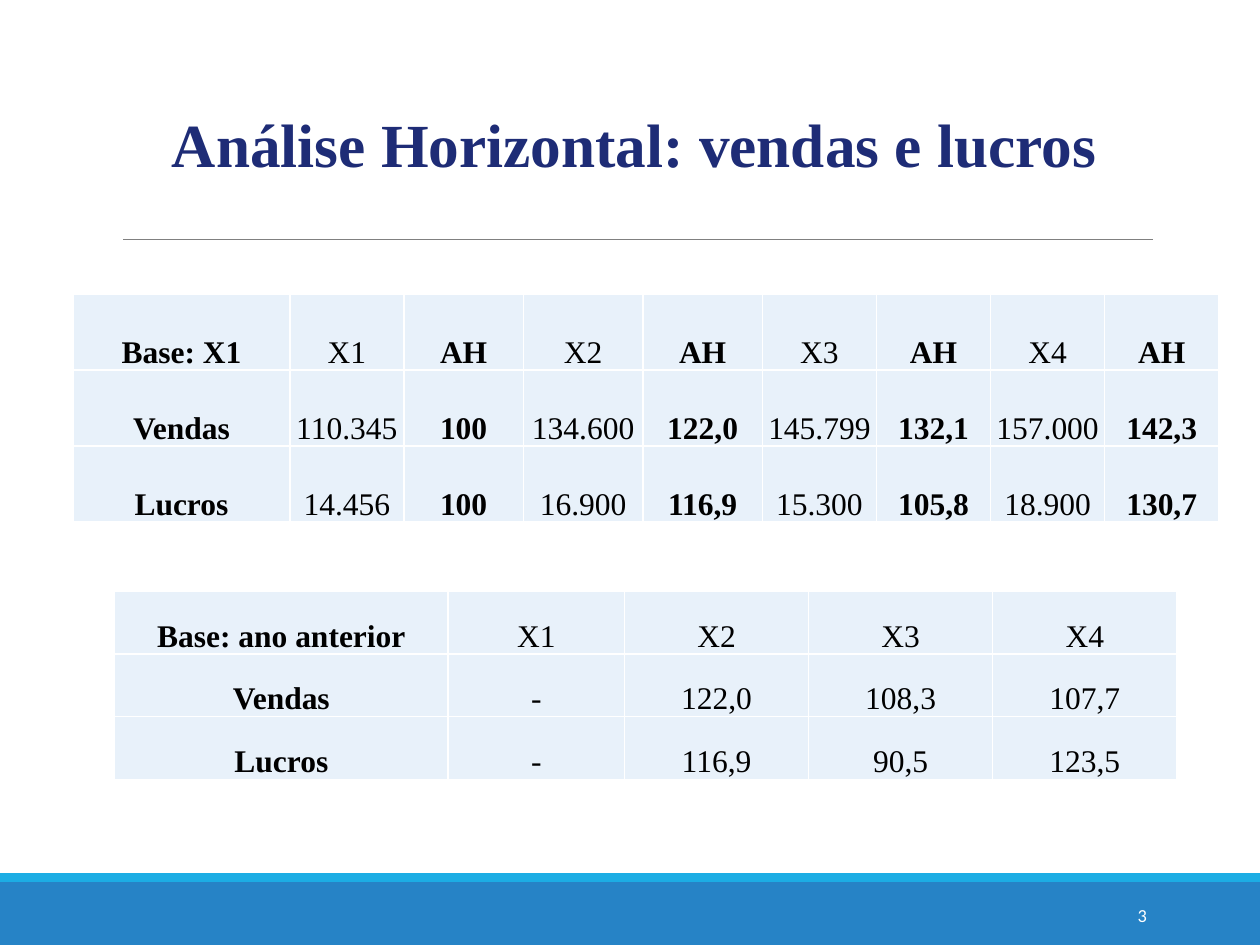
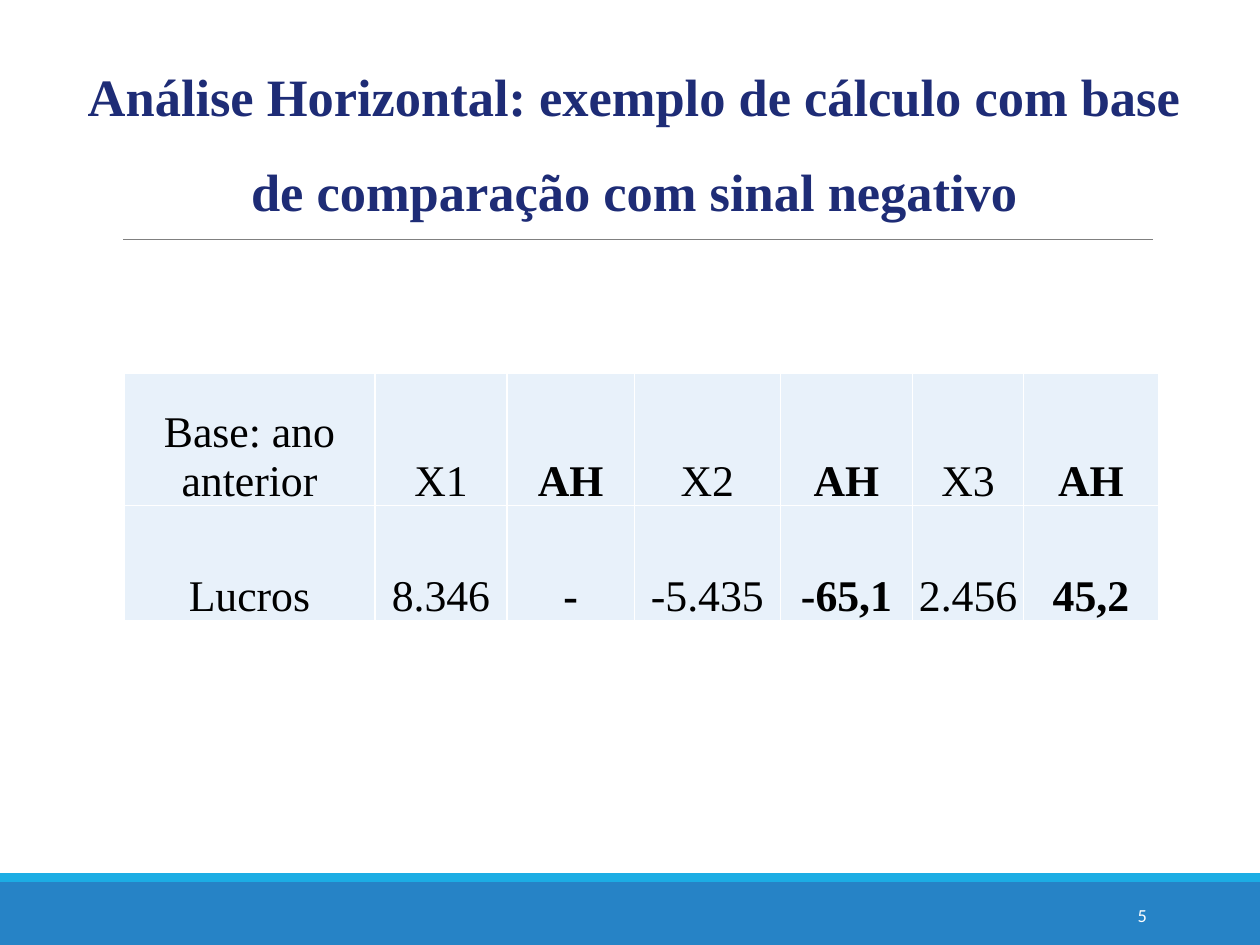
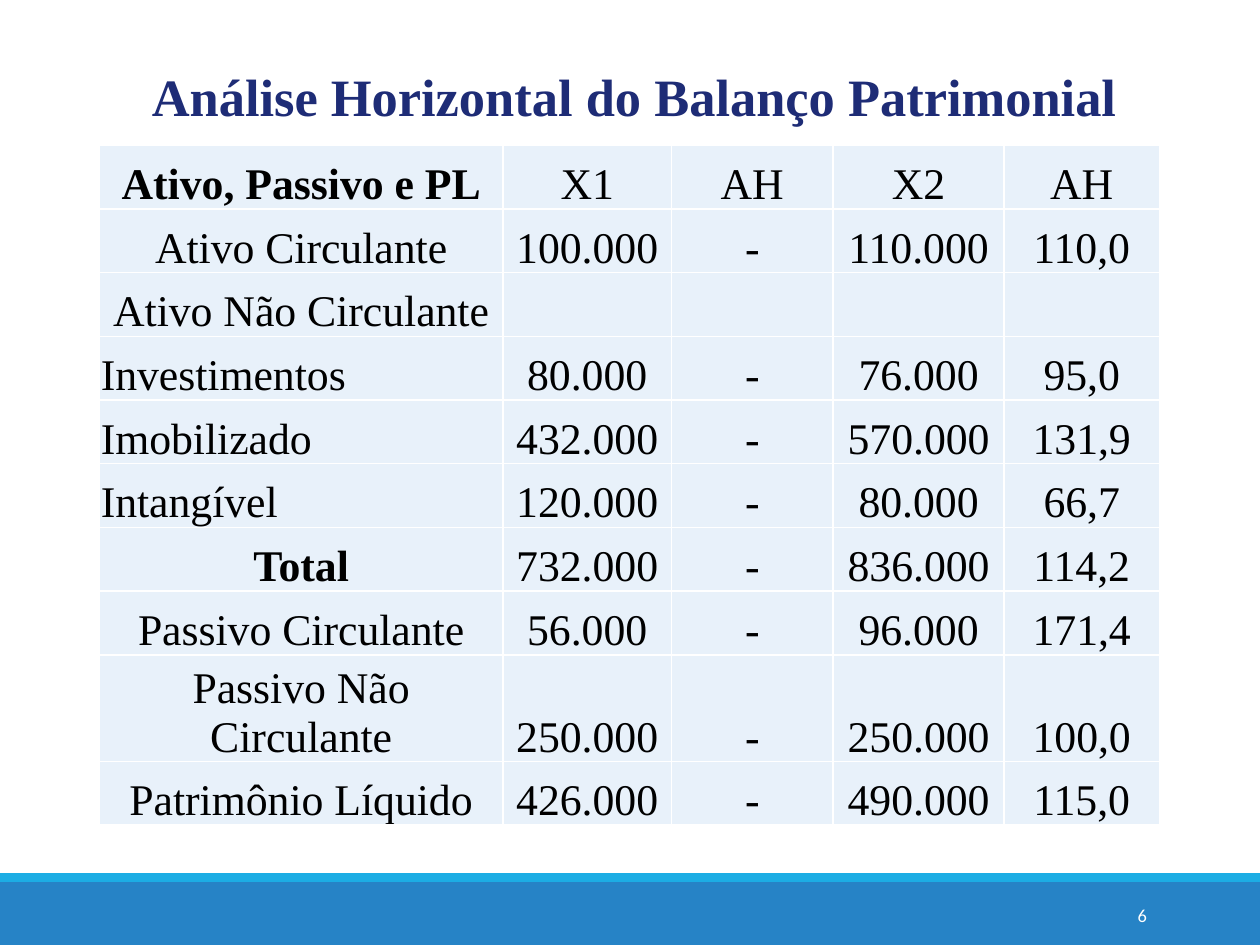
from lxml.etree import SubElement
from pptx import Presentation
from pptx.dml.color import RGBColor
from pptx.enum.shapes import MSO_CONNECTOR as CONN, MSO_SHAPE as SHAPE
from pptx.enum.text import MSO_ANCHOR as ANCHOR, PP_ALIGN as ALIGN
from pptx.oxml.ns import qn
from pptx.util import Pt

SERIF = "Times New Roman"
SANS = "Calibri"
NAVY, BLUE, CYAN = "1E2C76", "2683C6", "1CADE4"
GRAY, PALE, WHITE, BLACK = "808080", "E8F1FA", "FFFFFF", "000000"


def rgb(value):
    return RGBColor.from_string(value)


def box(*lengths):
    return [Pt(v) for v in lengths]


class Deck:
    def __init__(self):
        self.prs = Presentation()
        self.prs.slide_width, self.prs.slide_height = box(720, 540)
        self.s = None

    def slide(self, number, title, top, height, size):
        self.s = self.prs.slides.add_slide(self.prs.slide_layouts[6])
        self.band(504, 36, BLUE)
        self.band(499, 5, CYAN)
        self.rule(70.5, 659, 136.8)
        self.text(number, (584.6, 508.3, 77.8, 28.8), ALIGN.RIGHT, ANCHOR.MIDDLE,
                  name=SANS, size=Pt(10.5), color=WHITE)
        self.text(title, (41.8, top, 641.5, height), ALIGN.CENTER, ANCHOR.TOP, 1.5,
                  name=SERIF, size=Pt(size), color=NAVY, bold=True)

    def band(self, top, height, color):
        sp = self.s.shapes.add_shape(SHAPE.RECTANGLE, *box(0, top, 720, height))
        sp.shadow.inherit = False
        sp.fill.solid()
        sp.fill.fore_color.rgb = rgb(color)
        sp.line.fill.background()

    def rule(self, left, right, y):
        line = self.s.shapes.add_connector(CONN.STRAIGHT, *box(left, y, right, y))
        line.line.color.rgb = rgb(GRAY)
        line.line.width = Pt(0.5)
        SubElement(line._element.spPr, qn("a:effectLst"))

    def text(self, text, place, align, anchor, spacing=None, **style):
        tf = self.s.shapes.add_textbox(*box(*place)).text_frame
        tf.word_wrap = True
        tf.vertical_anchor = anchor
        self.fill_paragraph(tf.paragraphs[0], text, align, spacing, **style)

    def fill_paragraph(self, p, text, align, spacing=None, color=BLACK, **style):
        p.alignment = align
        p.line_spacing = spacing
        r = p.add_run()
        r.text = text
        r.font.color.rgb = rgb(color)
        for key, value in style.items():
            setattr(r.font, key, value)

    def table(self, left, top, widths, heights, rows, size, bold, left_rows=()):
        frame = self.s.shapes.add_table(
            len(rows), len(widths), *box(left, top, sum(widths), sum(heights)))
        table = frame.table
        for column, width in zip(table.columns, widths):
            column.width = Pt(width)
        for row, height in zip(table.rows, heights):
            row.height = Pt(height)
        for i, row in enumerate(rows):
            for j, text in enumerate(row):
                cell = table.cell(i, j)
                self.style_cell(cell)
                if text:
                    align = ALIGN.LEFT if j == 0 and i in left_rows else ALIGN.CENTER
                    self.fill_paragraph(cell.text_frame.paragraphs[0], text, align,
                                        name=SERIF, size=Pt(size), bold=bold(i, j))

    def style_cell(self, cell):
        style = {"margin_left": Pt(0.7), "margin_right": Pt(0.7), "margin_top": Pt(0.7),
                 "margin_bottom": Pt(0), "vertical_anchor": ANCHOR.BOTTOM}
        for key, value in style.items():
            setattr(cell, key, value)
        tc_pr = cell._tc.get_or_add_tcPr()
        for side in "LRTB":
            line = SubElement(tc_pr, qn(f"a:ln{side}"), w=str(Pt(1)))
            fill = SubElement(line, qn("a:solidFill"))
            SubElement(fill, qn("a:srgbClr"), val=WHITE)
        cell.fill.solid()
        cell.fill.fore_color.rgb = rgb(PALE)


def main():
    deck = Deck()

    deck.slide("3", "Análise Horizontal: vendas e lucros", 36, 63.4, 35)
    deck.table(
        41.8, 168, [123.8, 65.2] + [68.3] * 3 + [65.2] * 4, [43.4] * 3,
        [["Base: X1", "X1", "AH", "X2", "AH", "X3", "AH", "X4", "AH"],
         ["Vendas", "110.345", "100", "134.600", "122,0", "145.799", "132,1",
          "157.000", "142,3"],
         ["Lucros", "14.456", "100", "16.900", "116,9", "15.300", "105,8",
          "18.900", "130,7"]],
        18, lambda i, j: j % 2 == 0)
    deck.table(
        65.5, 338, [190.6, 100.8] + [105.2] * 3, [35.8] * 3,
        [["Base: ano anterior", "X1", "X2", "X3", "X4"],
         ["Vendas", "-", "122,0", "108,3", "107,7"],
         ["Lucros", "-", "116,9", "90,5", "123,5"]],
        18, lambda i, j: j == 0)

    deck.slide("5", "Análise Horizontal: exemplo de cálculo com base "
               "de comparação com sinal negativo", 15.1, 116.6, 30)
    deck.table(
        70.9, 213.3, [143.3, 75.6, 72.7, 83.5, 75.6, 63.4, 77], [75.6, 65.8],
        [["Base: ano anterior", "X1", "AH", "X2", "AH", "X3", "AH"],
         ["Lucros", "8.346", "-", "-5.435", "-65,1", "2.456", "45,2"]],
        25, lambda i, j: j > 0 and j % 2 == 0)

    deck.slide("6", "Análise Horizontal do Balanço Patrimonial", 15.1, 55.4, 30)
    deck.table(
        56.9, 83, [230.4, 96.5, 92.2, 97.9, 88.6], [36.4] * 8 + [61, 36.4],
        [["Ativo, Passivo e PL", "X1", "AH", "X2", "AH"],
         ["Ativo Circulante", "100.000", "-", "110.000", "110,0"],
         ["Ativo Não Circulante", "", "", "", ""],
         ["Investimentos", "80.000", "-", "76.000", "95,0"],
         ["Imobilizado", "432.000", "-", "570.000", "131,9"],
         ["Intangível", "120.000", "-", "80.000", "66,7"],
         ["Total", "732.000", "-", "836.000", "114,2"],
         ["Passivo Circulante", "56.000", "-", "96.000", "171,4"],
         ["Passivo Não Circulante", "250.000", "-", "250.000", "100,0"],
         ["Patrimônio Líquido", "426.000", "-", "490.000", "115,0"]],
        25, lambda i, j: j == 0 and i in (0, 6), left_rows=(3, 4, 5))

    deck.prs.save("out.pptx")


if __name__ == "__main__":
    main()
